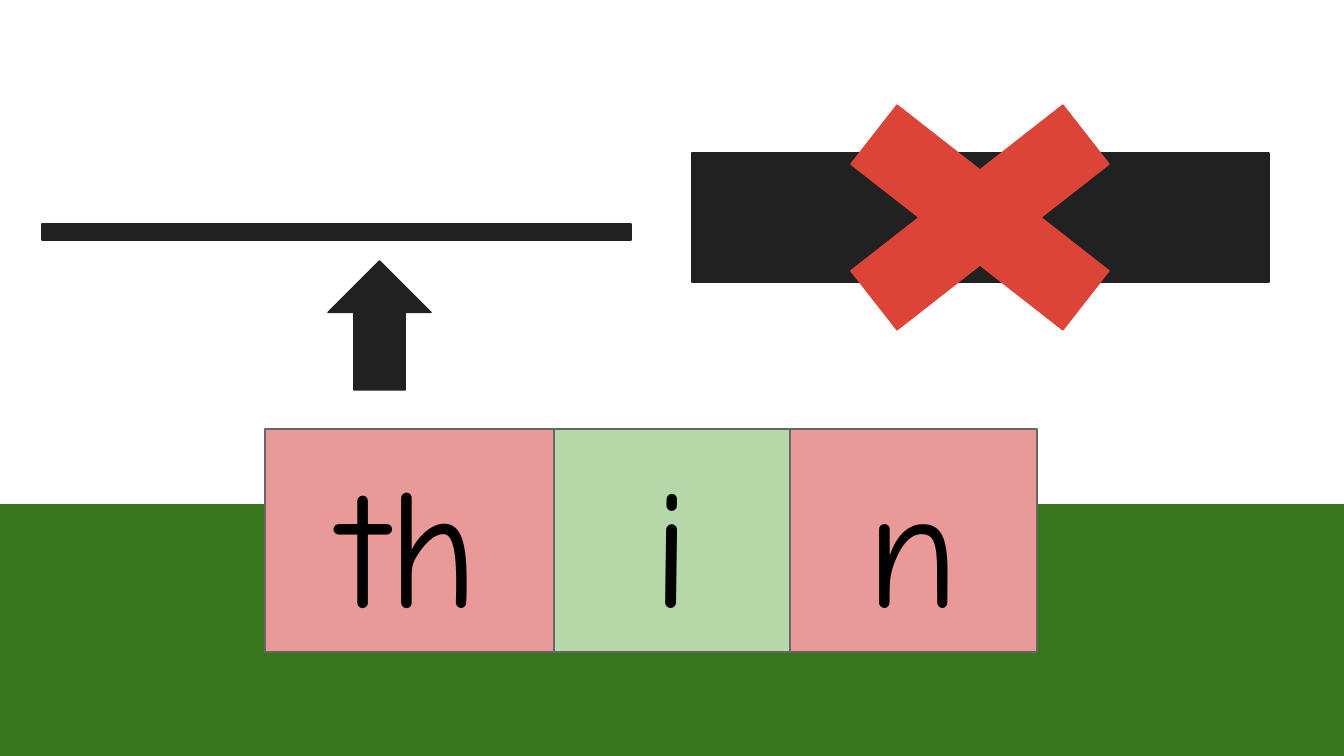
from pptx import Presentation
from pptx.dml.color import RGBColor
from pptx.enum.shapes import MSO_SHAPE
from pptx.enum.text import MSO_ANCHOR, PP_ALIGN
from pptx.util import Emu, Pt

EMU_PER_PX = 914400 / 134.4
WHITE, GREEN, DARK, RED = "FFFFFF", "38761D", "212121", "DB4437"
CONSONANT, VOWEL, TILE_EDGE = "EA9999", "B6D7A8", "666666"
TILE_LEFT, TILE_TOP, TILE_HEIGHT, TILE_INSET = 265, 429, 223, 27
TILES = [("th", 289, CONSONANT), ("i", 236, VOWEL), ("n", 247, CONSONANT)]


def px(length):
    return Emu(round(length * EMU_PER_PX))


def color(value):
    return RGBColor.from_string(value)


def add_figure(page, kind, bounds, fill, edge=None, adjustments=()):
    shape = page.shapes.add_shape(kind, *map(px, bounds))
    shape.shadow.inherit = False
    shape.fill.solid()
    shape.fill.fore_color.rgb = color(fill)
    if edge:
        shape.line.color.rgb = color(edge)
        shape.line.width = Pt(0.75)
    else:
        shape.line.fill.background()
    for index, value in enumerate(adjustments):
        shape.adjustments[index] = value
    return shape


def add_tile(page, letters, left, width, fill):
    bounds = (left, TILE_TOP, width, TILE_HEIGHT)
    tile = add_figure(page, MSO_SHAPE.RECTANGLE, bounds, fill, TILE_EDGE)
    frame = tile.text_frame
    frame.word_wrap = True
    frame.vertical_anchor = MSO_ANCHOR.MIDDLE
    frame.margin_left = frame.margin_right = px(TILE_INSET)
    frame.margin_top = frame.margin_bottom = px(TILE_INSET)
    para = frame.paragraphs[0]
    para.text = letters
    para.alignment = PP_ALIGN.CENTER
    para.font.name = "Comic Neue"
    para.font.size = Pt(90)
    para.font.color.rgb = color("000000")


def add_word(page):
    left = TILE_LEFT
    for letters, width, fill in TILES:
        add_tile(page, letters, left, width, fill)
        left += width


def main():
    deck = Presentation()
    deck.slide_width, deck.slide_height = px(1344), px(756)
    page = deck.slides.add_slide(deck.slide_layouts[6])
    page.background.fill.solid()
    page.background.fill.fore_color.rgb = color(GREEN)

    add_figure(page, MSO_SHAPE.RECTANGLE, (0, 0, 1344, 504), WHITE)
    add_word(page)
    add_figure(page, MSO_SHAPE.RECTANGLE, (692, 153, 577, 129), DARK, DARK)
    add_figure(page, MSO_SHAPE.RECTANGLE, (42, 224, 589, 16), DARK, DARK)
    add_figure(page, MSO_SHAPE.MATH_MULTIPLY, (776, 58, 408, 319), RED, RED, [0.235])
    add_figure(page, MSO_SHAPE.UP_ARROW, (328, 261, 103, 129), DARK, DARK, [0.5, 0.5])
    deck.save("out.pptx")


if __name__ == "__main__":
    main()
